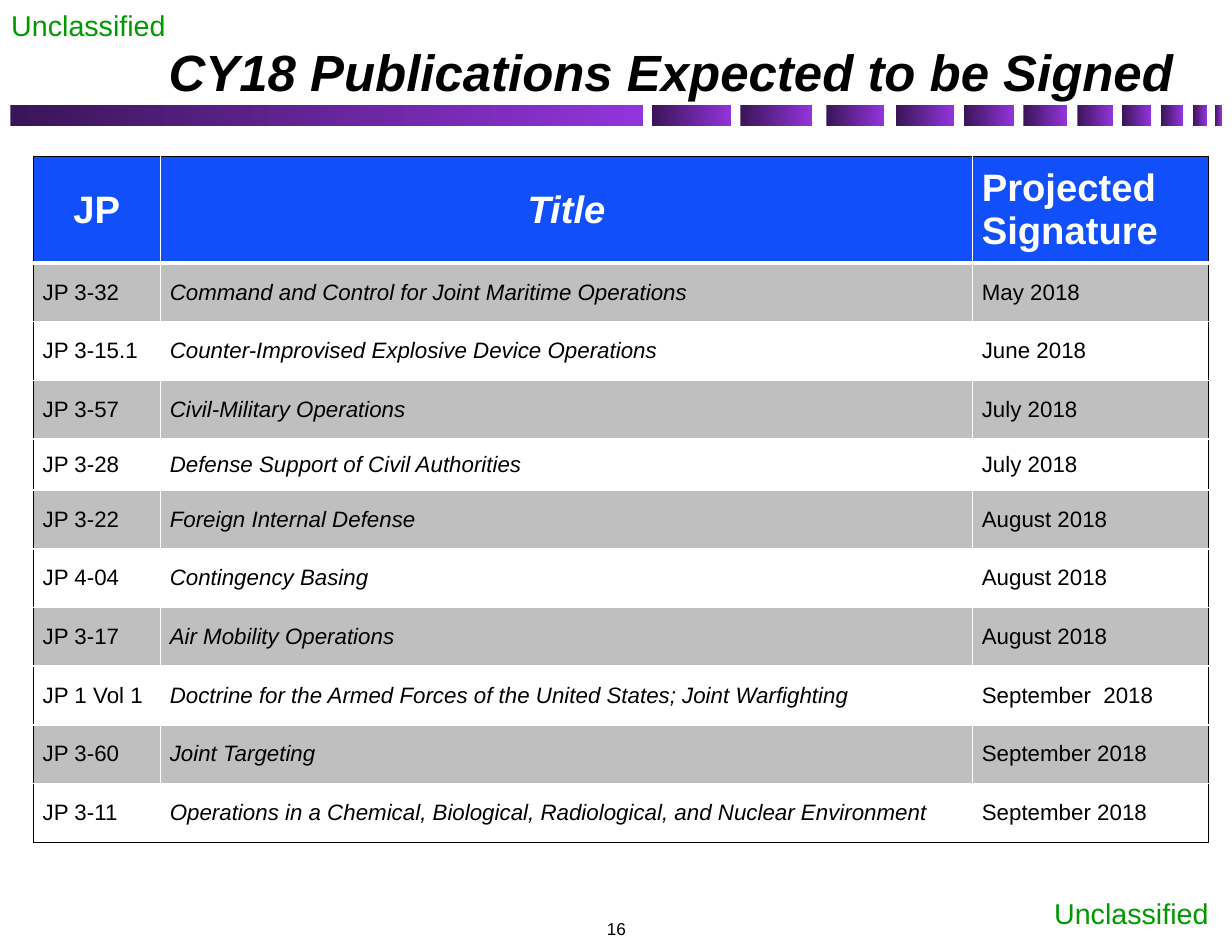
from dataclasses import dataclass

from lxml import etree
from pptx import Presentation
from pptx.dml.color import RGBColor
from pptx.enum.shapes import MSO_SHAPE
from pptx.enum.text import MSO_ANCHOR, MSO_AUTO_SIZE, PP_ALIGN
from pptx.oxml.ns import qn
from pptx.util import Pt

RECT = MSO_SHAPE.RECTANGLE
LEFT, CENTER, RIGHT = PP_ALIGN.LEFT, PP_ALIGN.CENTER, PP_ALIGN.RIGHT
TOP, MIDDLE, BOTTOM = MSO_ANCHOR.TOP, MSO_ANCHOR.MIDDLE, MSO_ANCHOR.BOTTOM
NO_AUTOFIT = MSO_AUTO_SIZE.NONE
TITLE_ONLY = 5


@dataclass(frozen=True)
class Theme:
    font: str = "Arial"
    black: str = "000000"
    white: str = "FFFFFF"
    marking: str = "009900"
    header: str = "114FFB"
    band: str = "BFBFBF"
    bar_start: str = "3A1558"
    bar_end: str = "9234DB"
    title_size: float = 32
    header_size: float = 24
    marking_size: float = 18
    body_size: float = 14
    page_size: float = 10.8


def set_all(target, values):
    for name, value in values.items():
        setattr(target, name, value)


def place(sp, box):
    set_all(sp, dict(zip(("left", "top", "width", "height"), map(Pt, box))))


class Deck:
    def __init__(self, prs, theme):
        self.theme = theme
        self.slide = prs.slides.add_slide(prs.slide_layouts[TITLE_ONLY])

    def add_run(self, tf, text, size, color, align=LEFT, bold=False, italic=False):
        p = tf.paragraphs[0]
        p.alignment = align
        r = p.add_run()
        r.text = text
        set_all(r.font, {"name": self.theme.font, "size": Pt(size),
                         "bold": bold, "italic": italic})
        r.font.color.rgb = RGBColor.from_string(color)

    def title(self, text, box):
        sp = self.slide.shapes.title
        place(sp, box)
        tf = sp.text_frame
        set_all(tf, {"auto_size": NO_AUTOFIT, "word_wrap": True,
                     "vertical_anchor": BOTTOM})
        set_all(tf, {f"margin_{side}": Pt(3.6)
                     for side in ("left", "top", "right", "bottom")})
        self.add_run(tf, text, self.theme.title_size, self.theme.black, RIGHT,
                     bold=True, italic=True)

    def text(self, text, box, size, color, align=LEFT, anchor=TOP):
        tf = self.slide.shapes.add_textbox(*map(Pt, box)).text_frame
        set_all(tf, {"word_wrap": False, "vertical_anchor": anchor})
        self.add_run(tf, text, size, color, align)

    def bar(self, box):
        sp = self.slide.shapes.add_shape(RECT, *map(Pt, box))
        sp.shadow.inherit = False
        sp.line.fill.background()
        sp.fill.gradient()
        sp.fill.gradient_angle = 0
        ends = (self.theme.bar_start, self.theme.bar_end)
        for stop, position, color in zip(sp.fill.gradient_stops, (0, 1), ends):
            stop.position = position
            stop.color.rgb = RGBColor.from_string(color)

    def border(self, cell, side, color, width):
        ln = etree.SubElement(cell._tc.get_or_add_tcPr(), qn(f"a:ln{side}"),
                              w=str(Pt(width)))
        fill = etree.SubElement(ln, qn("a:solidFill"))
        etree.SubElement(fill, qn("a:srgbClr"), val=color)

    def cell_borders(self, cell, row, col, last_row, last_col):
        """Black around the table, white inside, heavier under the header."""
        outer = {"L": col == 0, "R": col == last_col,
                 "T": row == 0, "B": row == last_row}
        for side, is_outer in outer.items():
            under_header = (row, side) in ((0, "B"), (1, "T"))
            self.border(cell, side,
                        self.theme.black if is_outer else self.theme.white,
                        3 if under_header else 1)

    def table(self, rows, left, top, widths, heights):
        t = self.theme
        table = self.slide.shapes.add_table(
            len(rows), len(widths), Pt(left), Pt(top),
            Pt(sum(widths)), Pt(sum(heights))).table
        table.horz_banding = False
        for column, width in zip(table.columns, widths):
            column.width = Pt(width)
        for row, height in zip(table.rows, heights):
            row.height = Pt(height)
        for i, values in enumerate(rows):
            is_header = i == 0
            fill = t.header if is_header else t.band if i % 2 else t.white
            size = t.header_size if is_header else t.body_size
            color = t.white if is_header else t.black
            for j, value in enumerate(values):
                cell = table.cell(i, j)
                set_all(cell, {"vertical_anchor": MIDDLE,
                               "margin_left": Pt(5.9), "margin_right": Pt(5.9),
                               "margin_top": Pt(2.9), "margin_bottom": Pt(2.9)})
                self.cell_borders(cell, i, j, len(rows) - 1, len(widths) - 1)
                cell.fill.solid()
                cell.fill.fore_color.rgb = RGBColor.from_string(fill)
                self.add_run(cell.text_frame, value, size, color,
                             CENTER if is_header and j < 2 else LEFT,
                             bold=is_header, italic=j == 1)


BARS = [(6.5, 397.4), (409.7, 49.7), (465.1, 45.2), (519.1, 36.2),
        (563, 36.2), (605.5, 31.7), (643, 27.2), (676.8, 22.3),
        (704.9, 18), (729.4, 13.7), (749.5, 8.6), (763.2, 4.3)]

PUBLICATIONS = [
    ("JP", "Title", "Projected Signature"),
    ("JP 3-32", "Command and Control for Joint Maritime Operations", "May 2018"),
    ("JP 3-15.1", "Counter-Improvised Explosive Device Operations", "June 2018"),
    ("JP 3-57", "Civil-Military Operations", "July 2018"),
    ("JP 3-28", "Defense Support of Civil Authorities", "July 2018"),
    ("JP 3-22", "Foreign Internal Defense", "August 2018"),
    ("JP 4-04", "Contingency Basing", "August 2018"),
    ("JP 3-17", "Air Mobility Operations", "August 2018"),
    ("JP 1 Vol 1", "Doctrine for the Armed Forces of the United States; "
     "Joint Warfighting", "September  2018"),
    ("JP 3-60", "Joint Targeting", "September 2018"),
    ("JP 3-11", "Operations in a Chemical, Biological, Radiological, "
     "and Nuclear Environment", "September 2018"),
]
ROW_HEIGHTS = [67] + [36.9] * 3 + [32.1] + [36.9] * 6


def main():
    prs = Presentation()
    set_all(prs, {"slide_width": Pt(774), "slide_height": Pt(594)})
    theme = Theme()
    deck = Deck(prs, theme)
    for left, width in BARS:
        deck.bar((left, 66.2, width, 13))
    for left, top in ((0, 1.4), (655.2, 559.4)):
        deck.text("Unclassified", (left, top, 112.3, 28.8),
                  theme.marking_size, theme.marking)
    deck.text("16", (306.7, 554.4, 161.3, 39.6), theme.page_size,
              theme.black, CENTER, BOTTOM)
    deck.title("CY18 Publications Expected to be Signed",
               (92.2, 22.3, 649.4, 45.4))
    deck.table(PUBLICATIONS, 20.9, 98.4, (79.9, 510.2, 148.3), ROW_HEIGHTS)
    prs.save("out.pptx")


if __name__ == "__main__":
    main()
